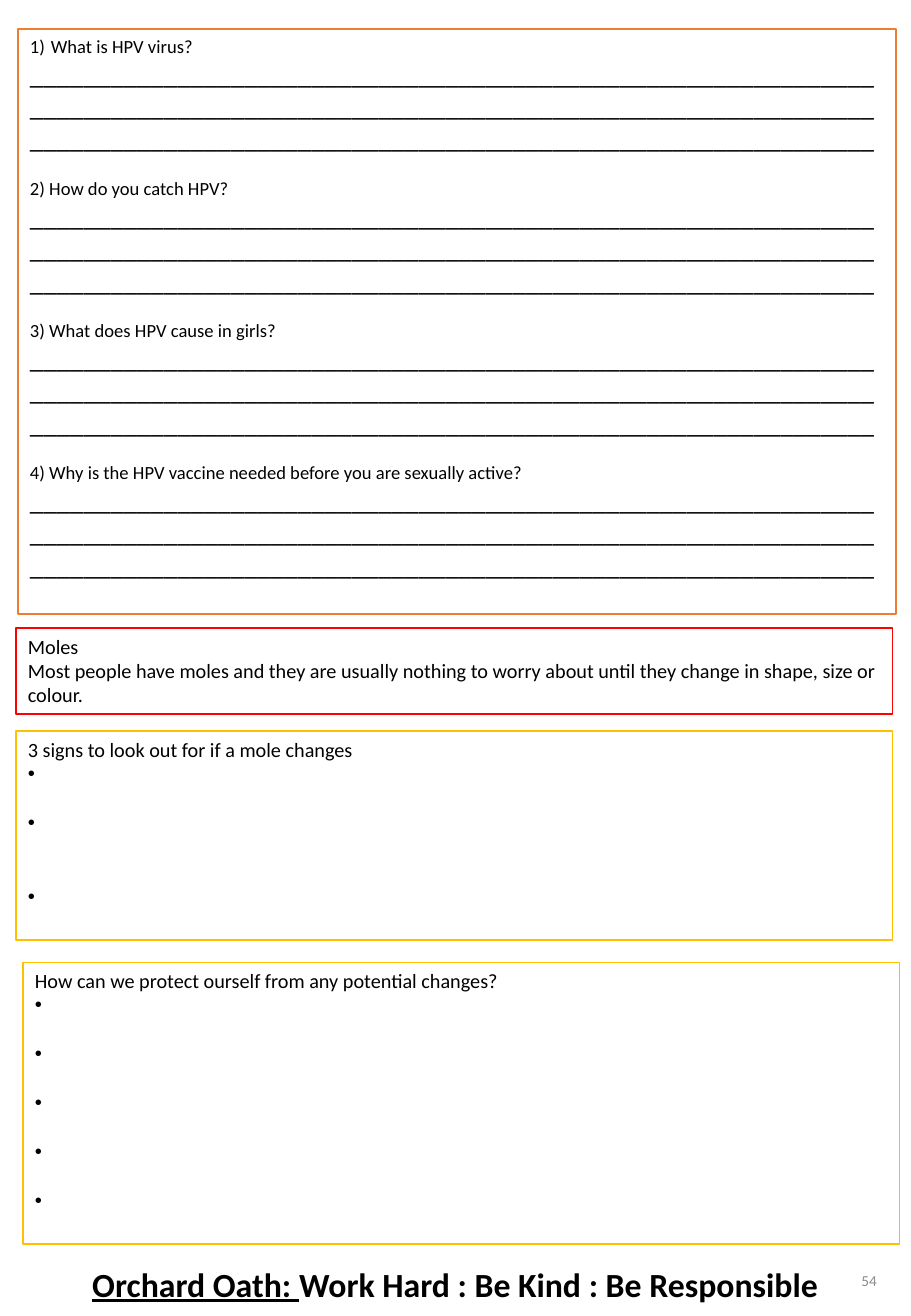
from lxml import etree
from pptx import Presentation, util as u
from pptx.dml.color import RGBColor
from pptx.enum import shapes, text
from pptx.oxml.ns import qn

PX = 914400 / 121.5
FONT = "Calibri"
ANSWER_LINE = "_" * 63
ANSWER_LINES = 3
LINE_HEIGHT = 1.22  # Calibri line height, in font sizes

QUESTIONS = [
    "What is HPV virus?",
    "2) How do you catch HPV?",
    "3) What does HPV cause in girls?",
    "4) Why is the HPV vaccine needed before you are sexually active?",
]


def px(length):
    return u.Emu(round(length * PX))


def colour(value):
    return RGBColor.from_string(value)


def set_bullet(paragraph, tag, indent, **attributes):
    properties = paragraph._p.get_or_add_pPr()
    properties.set("marL", str(px(indent)))
    properties.set("indent", str(-px(indent)))
    if tag == "a:buChar":
        etree.SubElement(properties, qn("a:buFont"), typeface="Arial")
    etree.SubElement(properties, qn(tag), **attributes)


def add_run(paragraph, content, size=12, ink="000000", bold=False, underline=False):
    run = paragraph.add_run()
    run.text = content
    font = run.font
    font.name, font.size = FONT, u.Pt(size)
    font.bold, font.underline = bold, underline
    font.color.rgb = colour(ink)


def add_paragraph(frame, content, gap=0, align=text.PP_ALIGN.LEFT, **style):
    """Fill the frame's first paragraph, or append one with a gap in points above it."""
    first = frame.paragraphs[0]
    paragraph = frame.add_paragraph() if first.runs else first
    paragraph.alignment = align
    if gap:
        paragraph.space_before = u.Pt(gap)
    add_run(paragraph, content, **style)
    return paragraph


def add_text_box(slide, left, top, width, height, anchor=text.MSO_ANCHOR.TOP):
    frame = slide.shapes.add_textbox(px(left), px(top), px(width), px(height)).text_frame
    frame.word_wrap = True
    frame.vertical_anchor = anchor
    return frame


def add_panel(slide, left, top, width, height, line, weight=0.75, fill=None):
    panel = slide.shapes.add_shape(
        shapes.MSO_SHAPE.RECTANGLE, px(left), px(top), px(width), px(height))
    panel.shadow.inherit = False
    if fill:
        panel.fill.solid()
        panel.fill.fore_color.rgb = colour(fill)
    else:
        panel.fill.background()
    panel.line.color.rgb = colour(line)
    panel.line.width = u.Pt(weight)
    frame = panel.text_frame
    frame.word_wrap = True
    frame.vertical_anchor = text.MSO_ANCHOR.TOP
    return frame


def add_questions(frame):
    size = 11
    for number, question in enumerate(QUESTIONS):
        paragraph = add_paragraph(
            frame, question, gap=size * LINE_HEIGHT if number else 0, size=size)
        if number == 0:
            set_bullet(paragraph, "a:buAutoNum", 21, type="arabicParenR")
        for _ in range(ANSWER_LINES):
            add_paragraph(frame, ANSWER_LINE, size=16)


def add_blank_bullets(frame, heading, gaps):
    """Write a heading, then one empty bullet per gap, each gap counted in lines."""
    size = 12
    add_paragraph(frame, heading, size=size)
    for lines in gaps:
        paragraph = add_paragraph(frame, " ", gap=lines * size * LINE_HEIGHT, size=size)
        set_bullet(paragraph, "a:buChar", 23, char="•")


def add_footer(slide):
    oath = add_text_box(slide, 0, 1262, 911, 54)
    paragraph = add_paragraph(oath, "Orchard Oath: ", align=text.PP_ALIGN.CENTER,
                              size=20, bold=True, underline=True)
    add_run(paragraph, "Work Hard : Be Kind : Be Responsible", size=20, bold=True)
    paragraph.line_spacing = 0.9

    page = add_text_box(slide, 684, 1245, 205, 70, anchor=text.MSO_ANCHOR.MIDDLE)
    add_paragraph(page, "54", align=text.PP_ALIGN.RIGHT, size=9, ink="8C8C8C")


def main():
    presentation = Presentation()
    presentation.slide_width, presentation.slide_height = u.Inches(7.5), u.Inches(10.83)
    slide = presentation.slides.add_slide(presentation.slide_layouts[6])

    add_footer(slide)

    moles = add_panel(slide, 16, 628, 877, 86, "FF0000")
    add_paragraph(moles, "Moles")
    add_paragraph(moles, "Most people have moles and they are usually nothing to worry "
                         "about until they change in shape, size or colour.")

    signs = add_panel(slide, 16, 731, 877, 209, "FFC000")
    add_blank_bullets(signs, "3 signs to look out for if a mole changes", [0, 1, 2])

    protection = add_panel(slide, 23, 962, 877, 282, "FFC000")
    add_blank_bullets(protection, "How can we protect ourself from any potential changes?",
                      [0, 1, 1, 1, 1])

    add_questions(add_panel(slide, 18, 29, 878, 585, "ED7D31", weight=1, fill="FFFFFF"))
    presentation.save("out.pptx")


if __name__ == "__main__":
    main()
